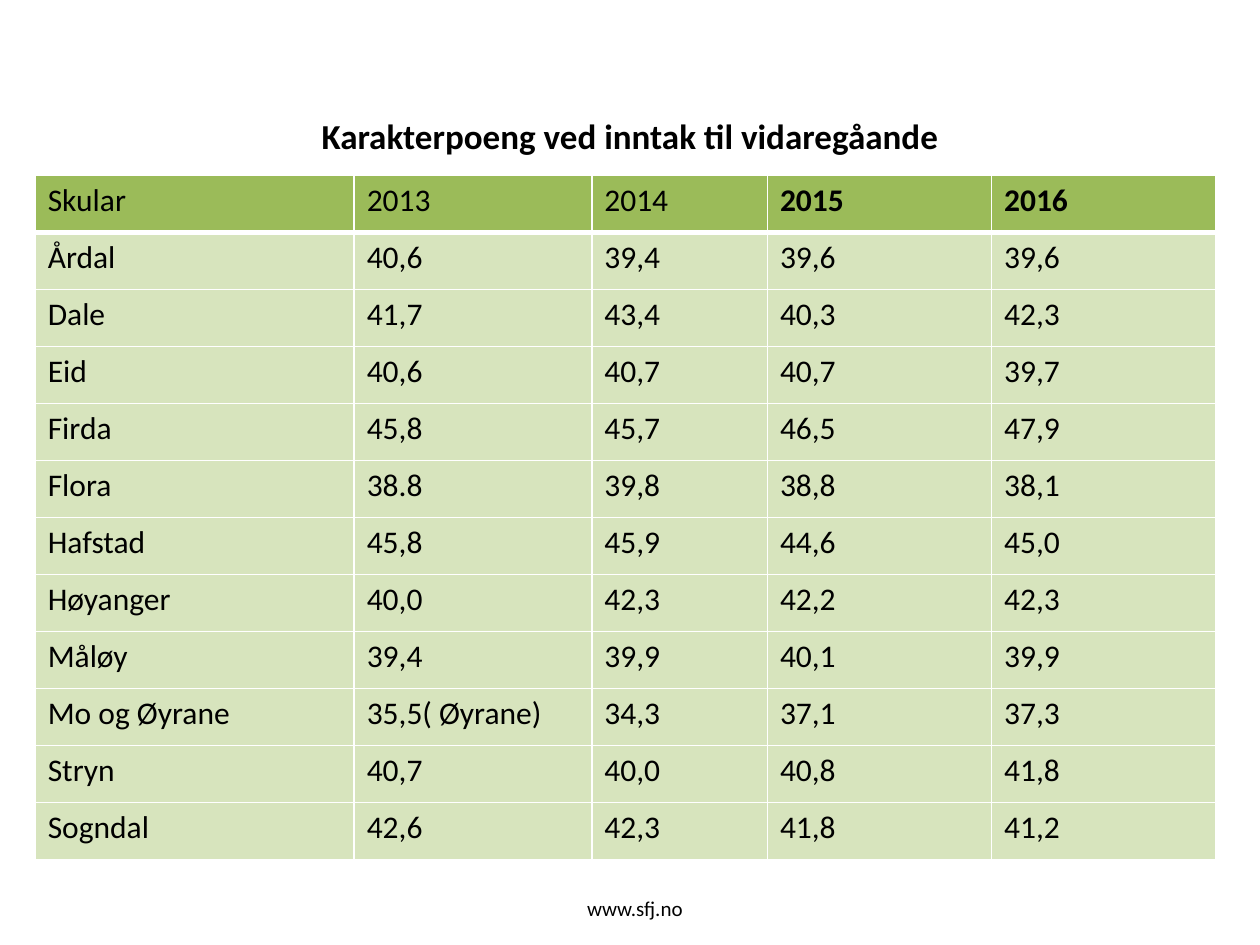
import pptx
import pptx.dml.color
import pptx.enum.text
import pptx.util
import lxml.etree
from pptx.oxml.ns import qn
from pptx.util import Cm


def color(hex_string):
    return pptx.dml.color.RGBColor.from_string(hex_string)


def write_text(text_frame, text, **font_format):
    paragraph = text_frame.paragraphs[0]
    run = paragraph.add_run()
    run.text = text
    run.font.color.rgb = color("000000")
    for name, value in {"name": "Calibri", "bold": False, **font_format}.items():
        setattr(run.font, name, value)
    return paragraph


presentation = pptx.Presentation()
presentation.slide_width = Cm(25.4)
presentation.slide_height = Cm(19.05)
slide = presentation.slides.add_slide(presentation.slide_layouts[6])

# Heading and footer
text_boxes = [
    ("Karakterpoeng ved inntak til vidaregåande", (1.27, 1.93, 22.86, 1.6), 20, True),
    ("www.sfj.no", (6.7, 17.93, 12.2, 0.74), 12, False),
]
for text, position, size, bold in text_boxes:
    shape = slide.shapes.add_textbox(*[Cm(length) for length in position])
    frame_format = {
        "word_wrap": True,
        "vertical_anchor": pptx.enum.text.MSO_ANCHOR.MIDDLE,
    }
    for name, value in frame_format.items():
        setattr(shape.text_frame, name, value)
    paragraph = write_text(shape.text_frame, text, size=pptx.util.Pt(size), bold=bold)
    paragraph.alignment = pptx.enum.text.PP_ALIGN.CENTER

# Grade points by school and year
rows = [
    ["Skular", "2013", "2014", "2015", "2016"],
    ["Årdal", "40,6", "39,4", "39,6", "39,6"],
    ["Dale", "41,7", "43,4", "40,3", "42,3"],
    ["Eid", "40,6", "40,7", "40,7", "39,7"],
    ["Firda", "45,8", "45,7", "46,5", "47,9"],
    ["Flora", "38.8", "39,8", "38,8", "38,1"],
    ["Hafstad", "45,8", "45,9", "44,6", "45,0"],
    ["Høyanger", "40,0", "42,3", "42,2", "42,3"],
    ["Måløy", "39,4", "39,9", "40,1", "39,9"],
    ["Mo og Øyrane", "35,5( Øyrane)", "34,3", "37,1", "37,3"],
    ["Stryn", "40,7", "40,0", "40,8", "41,8"],
    ["Sogndal", "42,6", "42,3", "41,8", "41,2"],
]
column_widths = [6.43, 4.79, 3.54, 4.52, 4.52]
row_height = 1.15
table = slide.shapes.add_table(
    len(rows), len(column_widths), Cm(0.71), Cm(3.54),
    Cm(sum(column_widths)), Cm(row_height * len(rows)),
).table
for column, width in zip(table.columns, column_widths):
    column.width = Cm(width)

for row_index, values in enumerate(rows):
    table.rows[row_index].height = Cm(row_height)
    is_header = row_index == 0
    for column_index, value in enumerate(values):
        cell = table.cell(row_index, column_index)
        write_text(cell.text_frame, value, size=pptx.util.Pt(18),
                   bold=is_header and column_index >= 3)

        # White borders, heavier below the header
        properties = cell._tc.get_or_add_tcPr()
        for side in ("lnL", "lnR", "lnT", "lnB"):
            width = 3 if is_header and side == "lnB" else 1
            line = lxml.etree.SubElement(
                properties, qn("a:" + side), w=str(pptx.util.Pt(width)))
            fill = lxml.etree.SubElement(line, qn("a:solidFill"))
            lxml.etree.SubElement(fill, qn("a:srgbClr"), val="FFFFFF")

        cell.fill.solid()
        cell.fill.fore_color.rgb = color("9BBB59" if is_header else "D7E4BD")

presentation.save("out.pptx")
